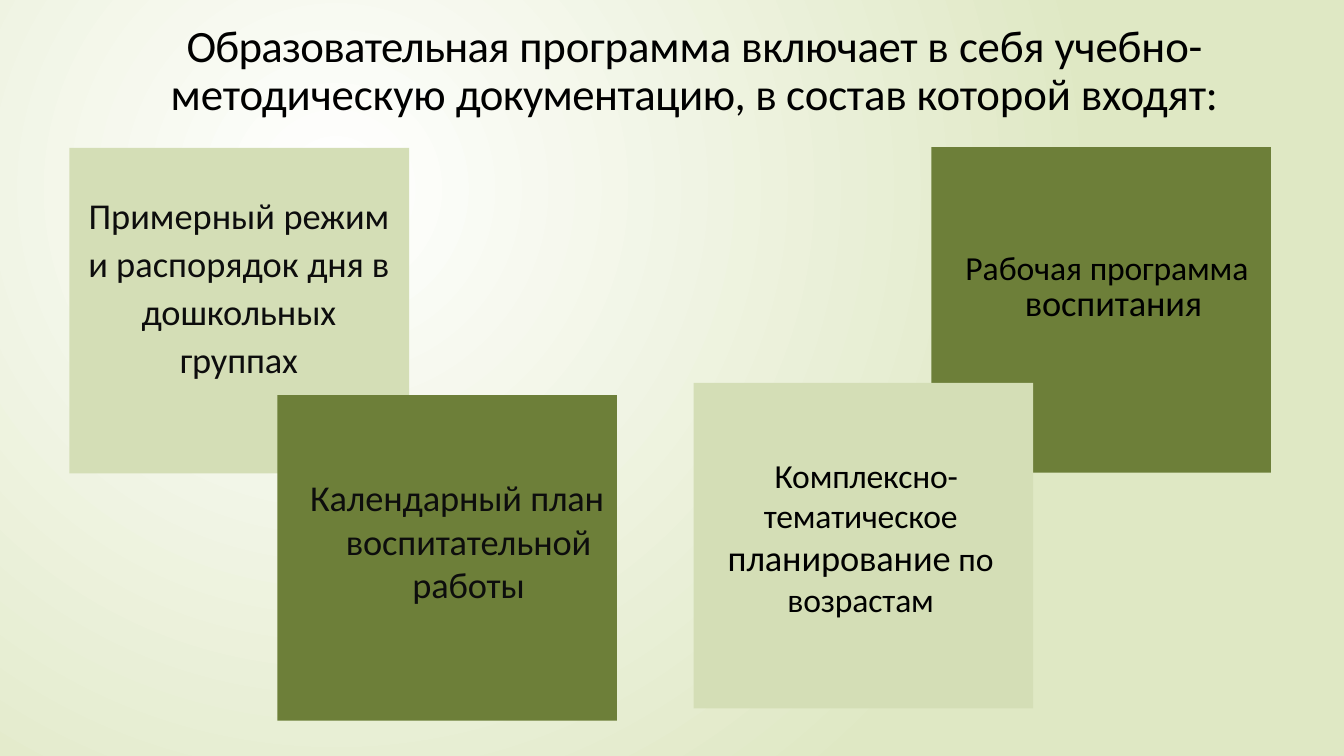
from lxml import etree
from pptx import Presentation
from pptx.dml.color import RGBColor
from pptx.enum.shapes import MSO_SHAPE
from pptx.enum.text import MSO_ANCHOR, MSO_AUTO_SIZE, PP_ALIGN
from pptx.oxml.ns import qn
from pptx.util import Cm, Pt

RECTANGLE = MSO_SHAPE.RECTANGLE
TOP = MSO_ANCHOR.TOP
FIT = MSO_AUTO_SIZE.SHAPE_TO_FIT_TEXT
CENTER, LEFT = PP_ALIGN.CENTER, PP_ALIGN.LEFT

FONT = "Calibri"
BLACK, INK = "000000", "0D0D0D"
LIGHT, DARK = "D4DEB6", "6D7F39"
TITLE_ONLY = 5
CARD_WIDTH, CARD_HEIGHT = Cm(8.56), Cm(8.2)


def color(value):
    return RGBColor.from_string(value)


def set_attributes(target, values):
    for name, value in values.items():
        setattr(target, name, value)


def paint_background(slide):
    fill = slide.background.fill
    fill.gradient()
    for stop, shade in zip(fill.gradient_stops, ("FFFFFF", "DFE8C4")):
        stop.color.rgb = color(shade)
    gradient = slide.element.find(".//" + qn("a:gradFill"))
    gradient.remove(gradient.find(qn("a:lin")))
    circle = etree.SubElement(gradient, qn("a:path"), path="circle")
    etree.SubElement(circle, qn("a:fillToRect"),
                     l="50000", t="50000", r="100000", b="100000")


def add_card(slide, left, top, shade):
    card = slide.shapes.add_shape(RECTANGLE, Cm(left), Cm(top), CARD_WIDTH, CARD_HEIGHT)
    card.shadow.inherit = False
    card.fill.solid()
    card.fill.fore_color.rgb = color(shade)
    card.line.fill.background()


def prepare_frame(frame, top_inset):
    set_attributes(frame, {
        "word_wrap": True, "auto_size": FIT, "vertical_anchor": TOP,
        "margin_left": 0, "margin_right": 0, "margin_bottom": 0,
        "margin_top": Cm(top_inset),
    })


def write_paragraph(paragraph, runs, shade, margin=0, indent=0, **layout):
    set_attributes(paragraph, {"alignment": CENTER, "space_before": Pt(0), **layout})
    properties = paragraph._p.get_or_add_pPr()
    properties.set("marL", str(Cm(margin)))
    properties.set("indent", str(Cm(indent)))
    for text, size, tracking in runs:
        run = paragraph.add_run()
        run.text = text
        set_attributes(run.font, {"name": FONT, "size": Pt(size)})
        run.font.color.rgb = color(shade)
        run.font._element.set("spc", str(round(tracking * 100)))


def add_label(slide, left, top, width, height, top_inset=0.03):
    label = slide.shapes.add_textbox(Cm(left), Cm(top), Cm(width), Cm(height))
    prepare_frame(label.text_frame, top_inset)
    return label.text_frame


def write_title(slide):
    title = slide.shapes.title
    set_attributes(title, {"left": Cm(1.52), "top": Cm(0.36),
                           "width": Cm(31.93), "height": Cm(2.69)})
    prepare_frame(title.text_frame, 0.23)
    words = [("Образовательная ", -0.5), ("программа ", -0.1), ("включает ", -0.3),
             ("в ", 0), ("себя ", -0.2), ("учебно- методическую ", -0.1),
             ("документацию, ", -0.4), ("в ", -0.5), ("состав ", -0.2),
             ("которой входят:", -0.1)]
    write_paragraph(title.text_frame.paragraphs[0],
                    [(text, 32, tracking) for text, tracking in words],
                    BLACK, margin=0.03, line_spacing=0.9, space_before=Pt(6.3))


def add_upbringing_programme(slide):
    add_card(slide, 23.47, 3.71, DARK)
    frame = add_label(slide, 24.33, 6.17, 7.19, 2.01, top_inset=0.15)
    write_paragraph(frame.paragraphs[0],
                    [("Рабочая ", 24, 0), ("программа ", 24, -0.1), ("воспитания", 26, -0.1)],
                    BLACK, margin=1.5, indent=-1.5, alignment=LEFT,
                    line_spacing=Pt(26), space_before=Pt(4.2))


def add_daily_routine(slide):
    add_card(slide, 1.75, 3.73, LIGHT)
    frame = add_label(slide, 2.21, 4.72, 7.62, 4.93)
    write_paragraph(frame.paragraphs[0],
                    [("Примерный ", 26, 0), ("режим ", 26, -0.1), ("и распорядок ", 26, 0),
                     ("дня ", 26, -0.2), ("в ", 26, 0), ("дошкольных группах", 26, -0.1)],
                    INK, line_spacing=1.1, space_before=Pt(1))


def add_thematic_planning(slide):
    add_card(slide, 17.48, 9.65, LIGHT)
    frame = add_label(slide, 17.98, 11.43, 7.42, 4.22)
    write_paragraph(frame.paragraphs[0],
                    [("Комплексно- тематическое ", 24, -0.1), ("планирование", 26, -0.1),
                     (" ", 24, -0.1), ("по ", 24, 0), ("возрастам", 24, -0.1)],
                    BLACK, indent=0.28, space_before=Pt(1))


def add_calendar_plan(slide):
    add_card(slide, 6.99, 9.96, DARK)
    frame = add_label(slide, 7.8, 11.94, 7.44, 3.38)
    write_paragraph(frame.paragraphs[0], [("Календарный ", 26, -0.1), ("план", 26, -0.2)],
                    INK, space_before=Pt(1))
    write_paragraph(frame.add_paragraph(), [("воспитательной работы", 26, -0.1)],
                    INK, margin=0.58)


def main():
    presentation = Presentation()
    set_attributes(presentation, {"slide_width": Cm(33.87), "slide_height": Cm(19.05)})
    slide = presentation.slides.add_slide(presentation.slide_layouts[TITLE_ONLY])
    paint_background(slide)
    write_title(slide)
    add_upbringing_programme(slide)
    add_daily_routine(slide)
    add_thematic_planning(slide)
    add_calendar_plan(slide)
    presentation.save("out.pptx")


if __name__ == "__main__":
    main()
